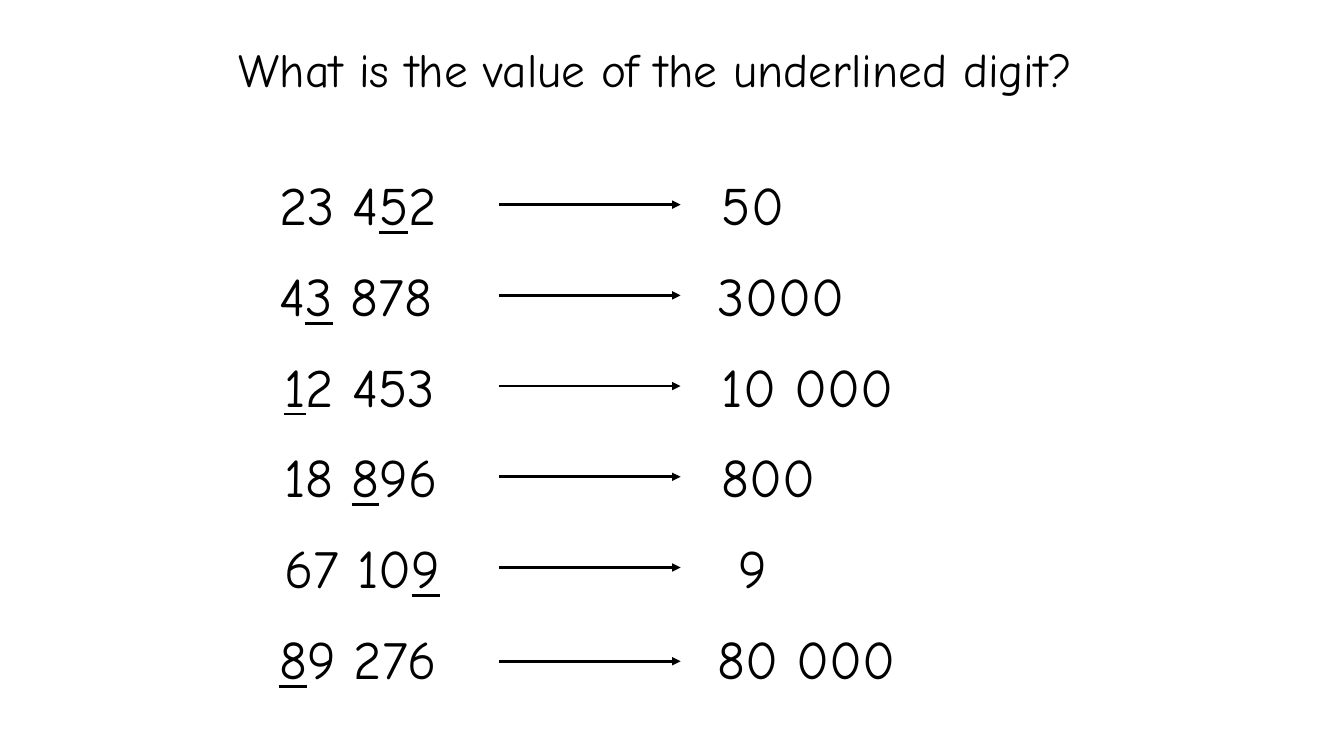
from dataclasses import dataclass

from lxml import etree
from pptx import Presentation
from pptx.dml.color import RGBColor
from pptx.enum.shapes import MSO_CONNECTOR
from pptx.enum.text import MSO_ANCHOR
from pptx.oxml.ns import qn
from pptx.slide import Slide
from pptx.util import Inches, Pt

STRAIGHT = MSO_CONNECTOR.STRAIGHT
MIDDLE = MSO_ANCHOR.MIDDLE

FONT = "Comic Neue"
BLACK = "000000"
TITLE_SIZE = 33.8
NUMBER_SIZE = 38.7
INSET = Inches(0.04)
FRAME_FORMAT = {
    "word_wrap": True,
    "vertical_anchor": MIDDLE,
    "margin_left": INSET,
    "margin_right": INSET,
    "margin_top": INSET,
    "margin_bottom": INSET,
}

FIRST_ROW_TOP = 1.66
ROW_PITCH = 0.9
ROW_HEIGHT = 0.73
ARROW_OFFSET = 0.37
ARROW_LEFT, ARROW_RIGHT = 4.95, 6.75


@dataclass(frozen=True)
class Question:
    number: str
    underlined: int  # position of the underlined digit within number
    left: float
    width: float
    answer: str
    answer_left: float
    answer_width: float
    arrow_drop: float = 0


QUESTIONS = [
    Question("23 452", 4, 2.73, 1.9, "50", 7.12, 0.74),
    Question("43 878", 1, 2.73, 1.9, "3000", 7.08, 1.4),
    Question("12 453", 0, 2.78, 1.81, "10 000", 7.12, 1.81),
    Question("18 896", 3, 2.78, 1.81, "800", 7.12, 1.07),
    Question("67 109", 5, 2.78, 1.81, "9", 7.28, 0.41),
    Question("89 276", 0, 2.73, 1.9, "80 000", 7.08, 1.9, arrow_drop=0.03),
]


def color(value: str) -> RGBColor:
    return RGBColor.from_string(value)


def add_text(slide: Slide, text: str, left: float, top: float, width: float,
             height: float, size: float, underlined: int | None = None) -> None:
    """Add a text box, underlining the character at the given position."""
    shape = slide.shapes.add_textbox(
        Inches(left), Inches(top), Inches(width), Inches(height))
    frame = shape.text_frame
    for name, value in FRAME_FORMAT.items():
        setattr(frame, name, value)
    if underlined is None:
        parts = [(text, False)]
    else:
        parts = [
            (text[:underlined], False),
            (text[underlined], True),
            (text[underlined + 1:], False),
        ]
    paragraph = frame.paragraphs[0]
    for part, is_underlined in parts:
        if not part:
            continue
        run = paragraph.add_run()
        run.text = part
        font_format = {"name": FONT, "size": Pt(size), "underline": is_underlined}
        for name, value in font_format.items():
            setattr(run.font, name, value)
        run.font.color.rgb = color(BLACK)


def add_arrow(slide: Slide, y: float) -> None:
    arrow = slide.shapes.add_connector(
        STRAIGHT, Inches(ARROW_LEFT), Inches(y), Inches(ARROW_RIGHT), Inches(y))
    arrow.line.width = Pt(2)
    arrow.line.color.rgb = color(BLACK)
    etree.SubElement(arrow.line._get_or_add_ln(), qn("a:tailEnd"), type="triangle")
    etree.SubElement(arrow._element.spPr, qn("a:effectLst"))


def main() -> None:
    presentation = Presentation()
    presentation.slide_width = Inches(13.33)
    presentation.slide_height = Inches(7.5)
    slide = presentation.slides.add_slide(presentation.slide_layouts[6])

    add_text(slide, "What is the value of the underlined digit?",
             2.33, 0.36, 9.35, 0.65, TITLE_SIZE)
    for row, question in enumerate(QUESTIONS):
        top = FIRST_ROW_TOP + row * ROW_PITCH
        add_text(slide, question.number, question.left, top, question.width,
                 ROW_HEIGHT, NUMBER_SIZE, question.underlined)
        add_arrow(slide, top + ARROW_OFFSET + question.arrow_drop)
        add_text(slide, question.answer, question.answer_left, top,
                 question.answer_width, ROW_HEIGHT, NUMBER_SIZE)

    presentation.save("out.pptx")


if __name__ == "__main__":
    main()
